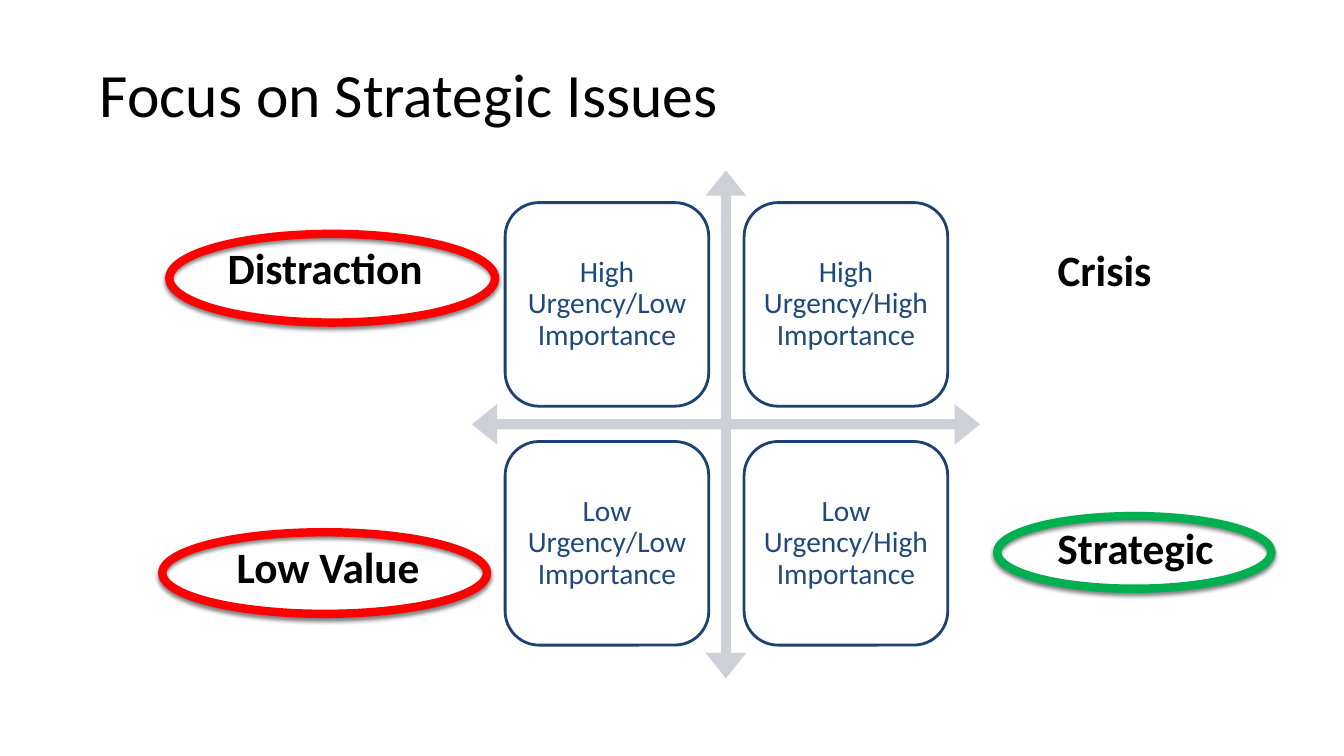
import pptx
import pptx.dml.color
import pptx.enum.shapes
import pptx.enum.text
import pptx.oxml
import pptx.oxml.ns
import pptx.util

SHAPE = pptx.enum.shapes.MSO_SHAPE
ALIGN = pptx.enum.text.PP_ALIGN
ANCHOR = pptx.enum.text.MSO_ANCHOR


def px(n):
    return pptx.util.Emu(n * 9144)


def rgb(value):
    return pptx.dml.color.RGBColor.from_string(value)


class MatrixSlide:
    """Holds the slide and its style, with one method per kind of element."""

    font = "Calibri"
    black = "000000"
    white = "FFFFFF"
    axis = "CDD0D7"
    border = "1C4271"
    ink = "1F497D"

    def __init__(self, prs):
        self.s = prs.slides.add_slide(prs.slide_layouts[5])

    def set_text(self, tf, text, size, color, bold=False, align=ALIGN.LEFT, spacing=None):
        tf.text = text
        p = tf.paragraphs[0]
        p.alignment = align
        p.line_spacing = spacing
        f = p.runs[0].font
        f.name, f.size, f.bold = self.font, pptx.util.Pt(size), bold
        f.color.rgb = rgb(color)

    def title(self, text, x, y, w, h):
        sp = self.s.shapes.title
        sp.left, sp.top, sp.width, sp.height = map(px, (x, y, w, h))
        sp.text_frame.vertical_anchor = ANCHOR.MIDDLE
        self.set_text(sp.text_frame, text, 44, self.black, spacing=0.9)

    def shape(self, kind, x, y, w, h, fill=None, line=None, weight=2):
        sp = self.s.shapes.add_shape(kind, *map(px, (x, y, w, h)))
        sp.shadow.inherit = False
        if fill:
            sp.fill.solid()
            sp.fill.fore_color.rgb = rgb(fill)
        else:
            sp.fill.background()
        if line:
            sp.line.color.rgb = rgb(line)
            sp.line.width = pptx.util.Pt(weight)
        else:
            sp.line.fill.background()
        return sp

    def axes(self, x, y, size):
        sp = self.shape(SHAPE.QUAD_ARROW, x, y, size, size, self.axis)
        for i, value in enumerate((0.02, 0.04, 0.05)):
            sp.adjustments[i] = value

    def quadrant(self, text, x, y, size):
        sp = self.shape(SHAPE.ROUNDED_RECTANGLE, x, y, size, size, self.white, self.border)
        tf = sp.text_frame
        tf.word_wrap = True
        tf.vertical_anchor = ANCHOR.MIDDLE
        tf.margin_left = tf.margin_right = tf.margin_top = tf.margin_bottom = px(9)
        self.set_text(tf, text, 21, self.ink, align=ALIGN.CENTER, spacing=0.9)

    def label(self, text, x, y, w, h):
        tf = self.s.shapes.add_textbox(*map(px, (x, y, w, h))).text_frame
        tf.word_wrap = False
        tf.auto_size = pptx.enum.text.MSO_AUTO_SIZE.SHAPE_TO_FIT_TEXT
        self.set_text(tf, text, 30.9, self.black, bold=True)

    def ring(self, color, x, y, w, h):
        sp = self.shape(SHAPE.OVAL, x, y, w, h, line=color, weight=6)
        effects = sp._element.spPr.find(pptx.oxml.ns.qn("a:effectLst"))
        effects.append(pptx.oxml.parse_xml(
            f'<a:outerShdw {pptx.oxml.ns.nsdecls("a")} blurRad="38100" dist="25400" '
            'dir="5400000" rotWithShape="0"><a:srgbClr val="000000">'
            '<a:alpha val="50000"/></a:srgbClr></a:outerShdw>'))


def main():
    prs = pptx.Presentation()
    prs.slide_width, prs.slide_height = px(1333), px(750)
    slide = MatrixSlide(prs)
    slide.title("Focus on Strategic Issues", 89, 24, 1150, 145)
    slide.axes(468, 169, 504)
    for row, urgency in enumerate(("High", "Low")):
        for col, importance in enumerate(("Low", "High")):
            text = f"{urgency} Urgency/{importance} Importance"
            slide.quadrant(text, 501 + 237 * col, 201 + 237 * row, 202)
    for text, x, y, w in (
        ("Distraction", 216, 234, 217),
        ("Low Value", 225, 531, 204),
        ("Crisis", 1039, 236, 115),
        ("Strategic", 1039, 512, 177),
    ):
        slide.label(text, x, y, w, 62)
    for color, x, y, w, h in (
        ("FF0000", 168, 232, 323, 88),
        ("00B050", 989, 512, 272, 72),
        ("FF0000", 161, 528, 322, 81),
    ):
        slide.ring(color, x, y, w, h)
    prs.save("out.pptx")


if __name__ == "__main__":
    main()
